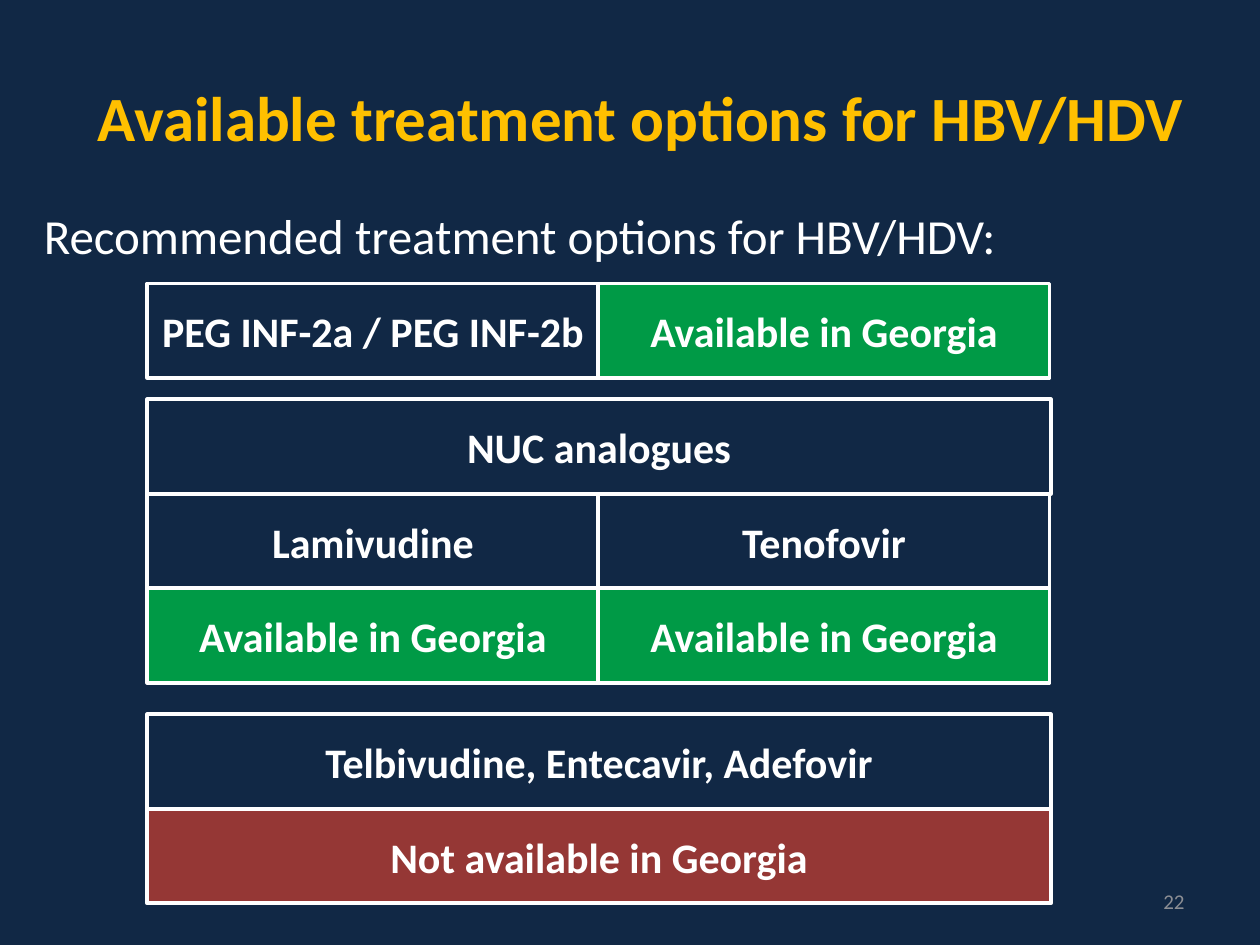
from dataclasses import dataclass
from typing import Optional

from pptx import Presentation
from pptx.dml.color import RGBColor
from pptx.enum.shapes import MSO_SHAPE
from pptx.enum.text import MSO_ANCHOR, PP_ALIGN
from pptx.util import Inches, Pt

NAVY = RGBColor(0x11, 0x28, 0x45)
WHITE = RGBColor(0xFF, 0xFF, 0xFF)
GOLD = RGBColor(0xFF, 0xC0, 0x00)
GREEN = RGBColor(0x00, 0x9A, 0x46)
RED = RGBColor(0x95, 0x37, 0x35)
GRAY = RGBColor(0x8C, 0x8E, 0x94)

LEFT = 1.17
HALF = 3.58
FULL = 7.17
HIGH = 0.75
STOCK = "Available in Georgia"


@dataclass
class Cell:
    text: str
    fill: Optional[RGBColor] = None


@dataclass
class Group:
    top: float
    rows: list[list[Cell]]


@dataclass
class Label:
    text: str
    left: float
    top: float
    width: float
    height: float
    size: int
    color: RGBColor
    align: PP_ALIGN
    bold: bool = False


GROUPS = [
    Group(2.25, [[Cell("PEG INF-2a / PEG INF-2b"), Cell(STOCK, GREEN)]]),
    Group(3.17, [
        [Cell("NUC analogues")],
        [Cell("Lamivudine"), Cell("Tenofovir")],
        [Cell(STOCK, GREEN), Cell(STOCK, GREEN)],
    ]),
    Group(5.67, [
        [Cell("Telbivudine, Entecavir, Adefovir")],
        [Cell("Not available in Georgia", RED)],
    ]),
]

LABELS = [
    Label("Recommended treatment options for HBV/HDV:",
          0.25, 1.58, 10, 0.57, 28, WHITE, PP_ALIGN.LEFT),
    Label("Available treatment options for HBV/HDV",
          0.5, 0.3, 9.17, 1.25, 36, GOLD, PP_ALIGN.CENTER, True),
    Label("22", 7.17, 6.95, 2.33, 0.4, 12, GRAY, PP_ALIGN.RIGHT),
]


def write(shape, text: str, size: int, color: RGBColor,
          align: PP_ALIGN, bold: bool) -> None:
    frame = shape.text_frame
    frame.word_wrap = True
    frame.vertical_anchor = MSO_ANCHOR.MIDDLE
    para = frame.paragraphs[0]
    para.text = text
    para.alignment = align
    font = para.font
    font.name = "Calibri"
    font.size = Pt(size)
    font.bold = bold
    font.color.rgb = color


def draw_cell(slide, cell: Cell, left: float, top: float, width: float) -> None:
    box = slide.shapes.add_shape(
        MSO_SHAPE.RECTANGLE,
        Inches(left), Inches(top), Inches(width), Inches(HIGH))
    box.shadow.inherit = False
    if cell.fill is None:
        box.fill.background()
    else:
        box.fill.solid()
        box.fill.fore_color.rgb = cell.fill
    box.line.color.rgb = WHITE
    box.line.width = Pt(2.25)
    write(box, cell.text, 24, WHITE, PP_ALIGN.CENTER, True)


def draw_group(slide, group: Group) -> None:
    for row, cells in enumerate(group.rows):
        width = FULL if len(cells) == 1 else HALF
        for col, cell in enumerate(cells):
            draw_cell(slide, cell, LEFT + col * HALF,
                      group.top + row * HIGH, width)


def draw_label(slide, label: Label) -> None:
    box = slide.shapes.add_textbox(
        Inches(label.left), Inches(label.top),
        Inches(label.width), Inches(label.height))
    write(box, label.text, label.size, label.color, label.align, label.bold)


def main() -> None:
    deck = Presentation()
    deck.slide_width = Inches(10)
    deck.slide_height = Inches(7.5)
    slide = deck.slides.add_slide(deck.slide_layouts[6])
    back = slide.background.fill
    back.solid()
    back.fore_color.rgb = NAVY
    for group in GROUPS:
        draw_group(slide, group)
    for label in LABELS:
        draw_label(slide, label)
    deck.save("out.pptx")


if __name__ == "__main__":
    main()
